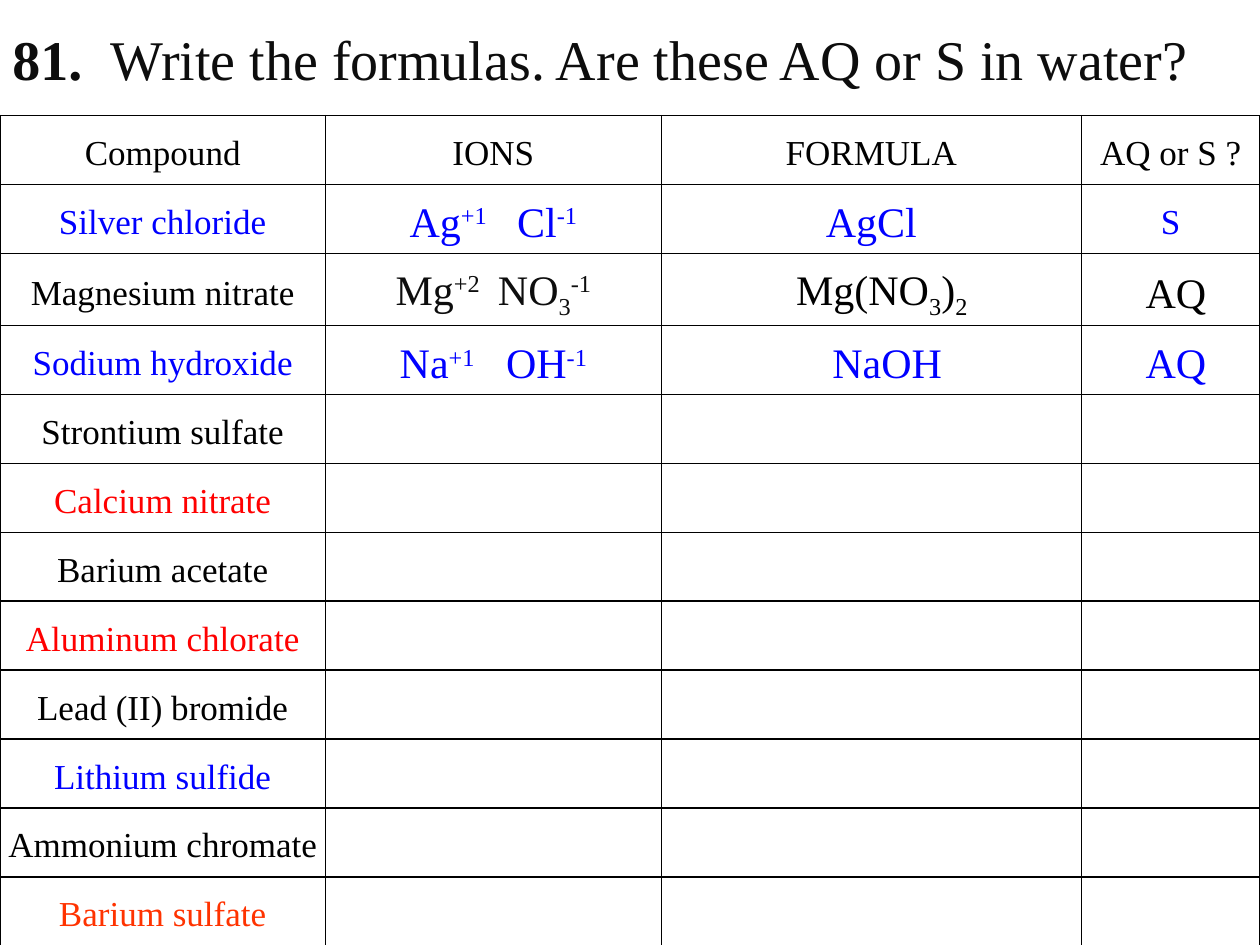
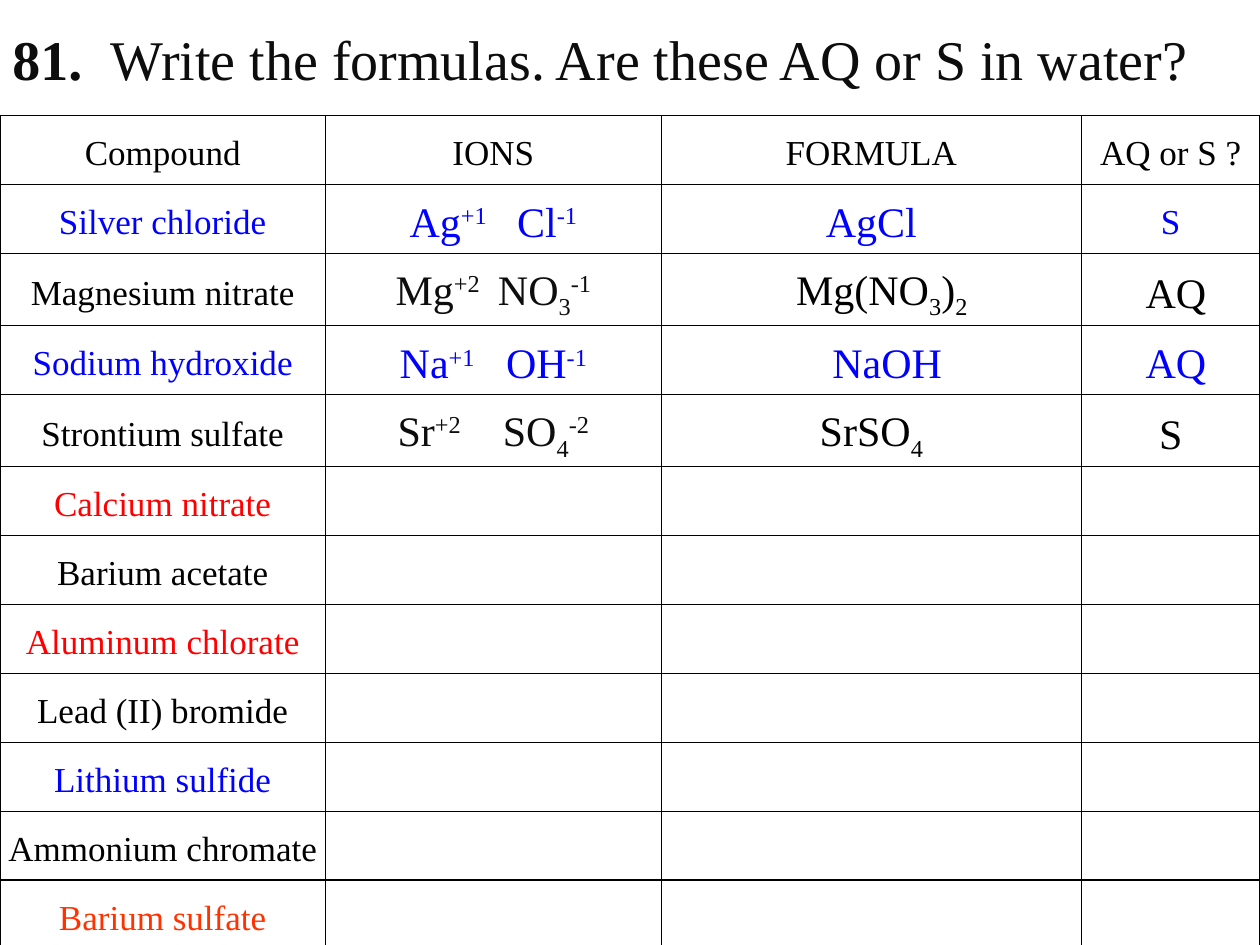
from dataclasses import dataclass
from typing import Optional

import pptx
import pptx.dml.color
import pptx.enum.text
import pptx.oxml
import pptx.oxml.ns
import pptx.util
from pptx.util import Cm, Pt


@dataclass(frozen=True)
class Theme:
    font: str = "Times New Roman"
    black: str = "000000"
    ink: str = "0D0D0D"
    blue: str = "0000FF"
    red: str = "FF0000"
    orange: str = "FF3300"
    title_size: int = 32
    answer_size: int = 24
    label_size: int = 20
    border_width: int = 1


THEME = Theme()


@dataclass(frozen=True)
class Answer:
    """In ions and formula, | parts the runs, ^ raises one and _ lowers one."""
    cation: str
    anion: str
    formula: str
    state: str
    ion_gap: float
    ion_color: str
    formula_indent: float = 0
    state_indent: float = 0
    state_size: int = THEME.answer_size


@dataclass(frozen=True)
class Compound:
    name: str
    color: str = THEME.black
    answer: Optional[Answer] = None


HEADINGS = ("Compound", "IONS", "FORMULA", "AQ or S ?")
COMPOUNDS = (
    Compound("Silver chloride", THEME.blue,
             Answer("Ag|^+1", "Cl|^-1", "AgCl", "S", 11.4, THEME.blue,
                    state_size=THEME.label_size)),
    Compound("Magnesium nitrate", THEME.black,
             Answer("Mg|^+2", "NO|_3|^-1", "Mg(NO|_3|)|_2", "AQ", 4.4, THEME.ink,
                    formula_indent=0.42, state_indent=0.21)),
    Compound("Sodium hydroxide", THEME.blue,
             Answer("Na|^+1", "OH|^-1", "NaOH", "AQ", 12, THEME.blue,
                    formula_indent=0.64, state_indent=0.21)),
    Compound("Strontium sulfate", THEME.black,
             Answer("Sr|^+2", "SO|_4|^-2", "SrSO|_4", "S", 18, THEME.ink)),
    Compound("Calcium nitrate", THEME.red),
    Compound("Barium acetate"),
    Compound("Aluminum chlorate", THEME.red),
    Compound("Lead (II) bromide"),
    Compound("Lithium sulfide", THEME.blue),
    Compound("Ammonium chromate"),
    Compound("Barium sulfate", THEME.orange),
)
ANSWERS_SHOWN = (3, 4)

SLIDE_WIDTH, SLIDE_HEIGHT = Cm(25.4), Cm(19.05)
TITLE_HEIGHT = Cm(2.33)
COLUMN_WIDTHS = (Cm(6.56), Cm(6.77), Cm(8.47), Cm(3.6))
ROW_HEIGHT = Cm(1.39)
SIDE_MARGIN = Cm(0.1)
# Keeps the rows with subscripts low enough for the last row to fit.
END_MARGIN = Cm(0.04)
BASELINES = {"^": "30000", "_": "-25000"}


def style_run(r, size: int, color: str, bold: bool = False) -> None:
    r.font.name = THEME.font
    r.font.size = Pt(size)
    r.font.bold = bold
    r.font.color.rgb = pptx.dml.color.RGBColor.from_string(color)


def add_gap(p, size: int, color: str, extra: float) -> None:
    """Add one space widened by extra points."""
    r = p.add_run()
    r.text = " "
    style_run(r, size, color)
    r._r.get_or_add_rPr().set("spc", str(round(extra * 100)))


def add_formula(p, markup: str, size: int, color: str) -> None:
    for part in markup.split("|"):
        r = p.add_run()
        r.text = part.lstrip("^_")
        style_run(r, size, color)
        if part[0] in BASELINES:
            r._r.get_or_add_rPr().set("baseline", BASELINES[part[0]])


def add_title(s) -> None:
    sp = s.shapes.add_textbox(0, 0, SLIDE_WIDTH, TITLE_HEIGHT)
    tf = sp.text_frame
    tf.word_wrap = True
    tf.vertical_anchor = pptx.enum.text.MSO_ANCHOR.MIDDLE
    p = tf.paragraphs[0]
    p.text = "81."
    style_run(p.runs[0], THEME.title_size, THEME.ink, bold=True)
    add_gap(p, THEME.title_size, THEME.ink, 8)
    r = p.add_run()
    r.text = "Write the formulas. Are these AQ or S in water?"
    style_run(r, THEME.title_size, THEME.ink)


def format_cell(cell) -> None:
    cell.margin_left = cell.margin_right = SIDE_MARGIN
    cell.margin_top = cell.margin_bottom = END_MARGIN
    cell.vertical_anchor = pptx.enum.text.MSO_ANCHOR.MIDDLE
    tc_pr = cell._tc.get_or_add_tcPr()
    for side in ("lnL", "lnR", "lnT", "lnB"):
        tc_pr.append(pptx.oxml.parse_xml(
            f'<a:{side} {pptx.oxml.ns.nsdecls("a")} w="{Pt(THEME.border_width)}">'
            f'<a:solidFill><a:srgbClr val="{THEME.black}"/></a:solidFill></a:{side}>'))
    cell.fill.background()


def cell_paragraph(cell, indent: float = 0):
    p = cell.text_frame.paragraphs[0]
    p.alignment = pptx.enum.text.PP_ALIGN.CENTER
    p.line_spacing = 1.19
    p.space_after = Pt(6)
    if indent:
        p._p.get_or_add_pPr().set("marL", str(Cm(indent)))
    return p


def fill_answer(cells, answer: Answer, color: str) -> None:
    ions, formula, state = cells
    size = THEME.answer_size
    p = cell_paragraph(ions)
    add_formula(p, answer.cation, size, answer.ion_color)
    add_gap(p, size, answer.ion_color, answer.ion_gap)
    add_formula(p, answer.anion, size, answer.ion_color)
    add_formula(cell_paragraph(formula, answer.formula_indent), answer.formula, size, color)
    add_formula(cell_paragraph(state, answer.state_indent), answer.state,
                answer.state_size, color)


def add_compound_table(s, answers_shown: int) -> None:
    row_count = len(COMPOUNDS) + 1
    table = s.shapes.add_table(row_count, len(HEADINGS), 0, TITLE_HEIGHT,
                               SLIDE_WIDTH, ROW_HEIGHT * row_count).table
    table.first_row = table.horz_banding = False
    for column, width in zip(table.columns, COLUMN_WIDTHS):
        column.width = width
    for row in table.rows:
        row.height = ROW_HEIGHT
    for cell in table.iter_cells():
        format_cell(cell)

    for cell, heading in zip(table.rows[0].cells, HEADINGS):
        add_formula(cell_paragraph(cell), heading, THEME.label_size, THEME.black)
    for i, compound in enumerate(COMPOUNDS):
        name_cell, *answer_cells = table.rows[i + 1].cells
        add_formula(cell_paragraph(name_cell), compound.name,
                    THEME.label_size, compound.color)
        if i < answers_shown and compound.answer:
            fill_answer(answer_cells, compound.answer, compound.color)


def main() -> None:
    prs = pptx.Presentation()
    prs.slide_width, prs.slide_height = SLIDE_WIDTH, SLIDE_HEIGHT
    for answers_shown in ANSWERS_SHOWN:
        s = prs.slides.add_slide(prs.slide_layouts[6])
        add_title(s)
        add_compound_table(s, answers_shown)
    prs.save("out.pptx")


if __name__ == "__main__":
    main()
